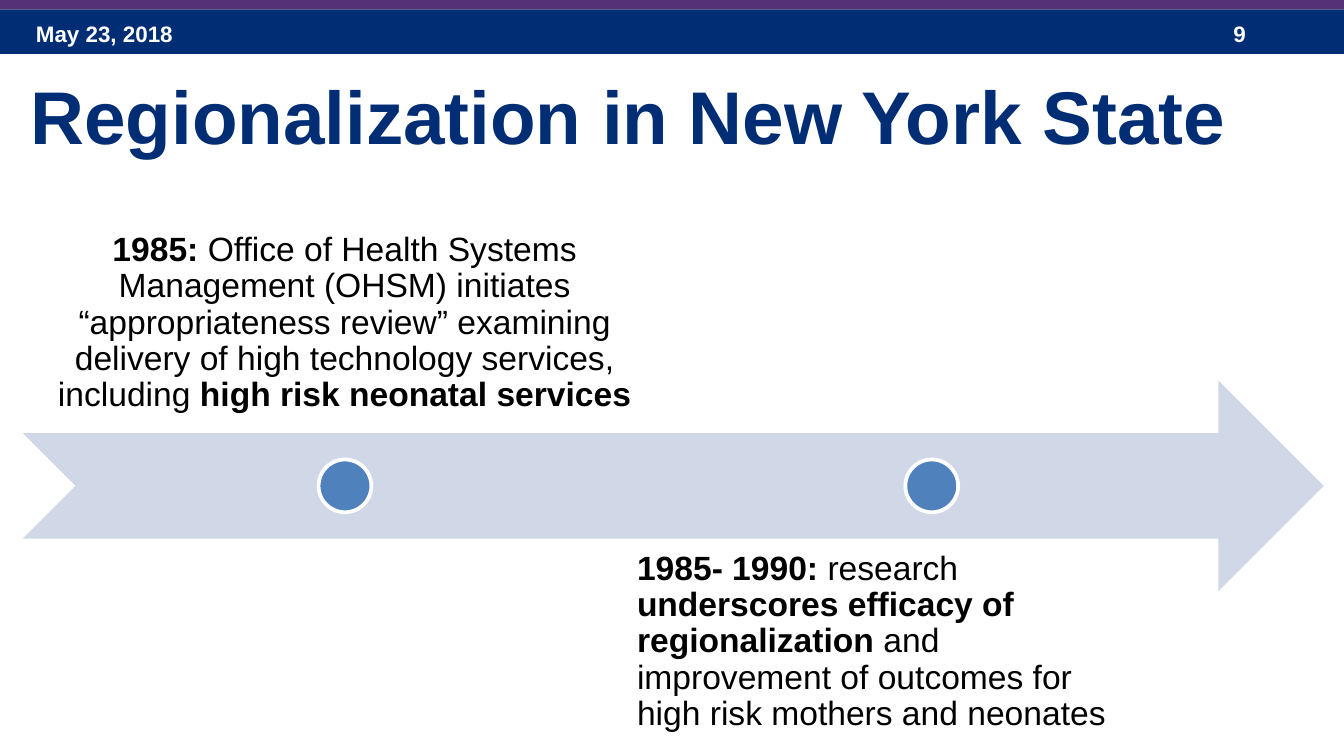
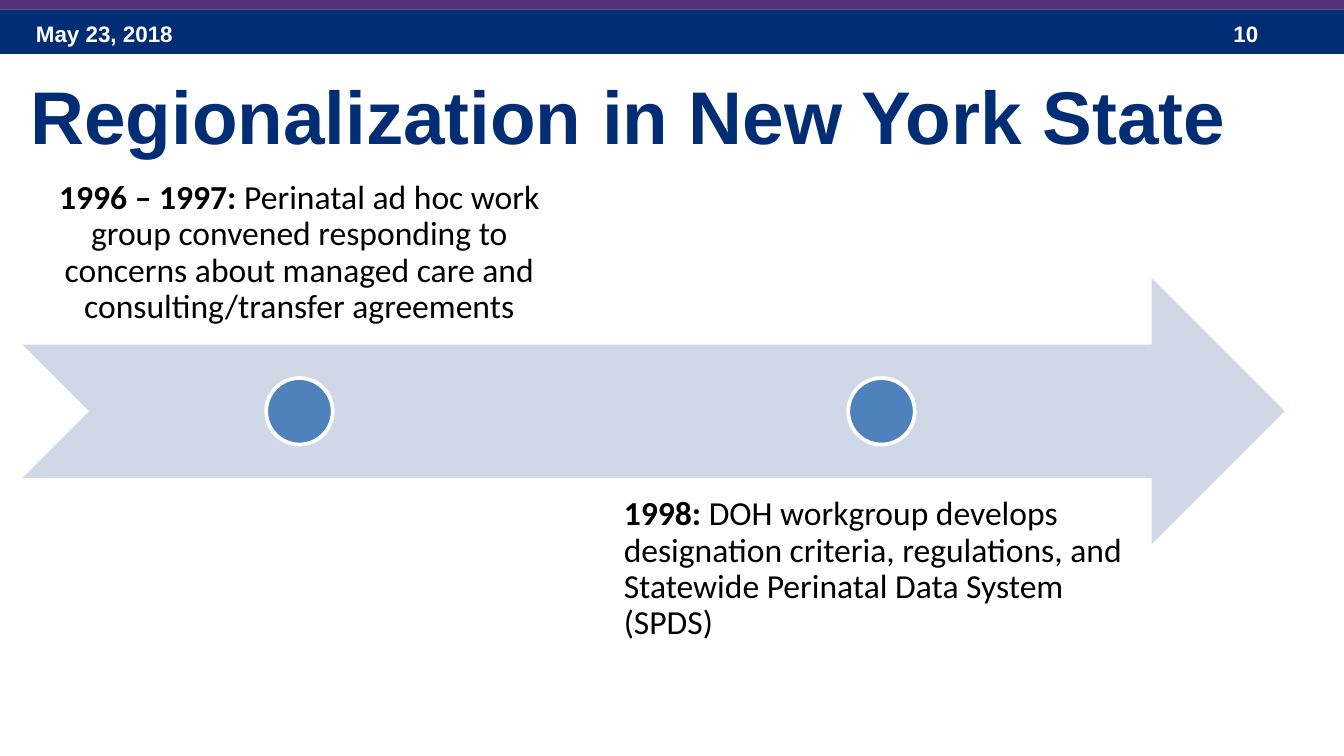
from pptx import Presentation
from pptx.dml.color import RGBColor
from pptx.enum.shapes import MSO_SHAPE
from pptx.enum.text import MSO_ANCHOR, PP_ALIGN
from pptx.util import Cm, Pt

RECT, OVAL, ARROW = MSO_SHAPE.RECTANGLE, MSO_SHAPE.OVAL, MSO_SHAPE.NOTCHED_RIGHT_ARROW
TOP, MIDDLE, BOTTOM = MSO_ANCHOR.TOP, MSO_ANCHOR.MIDDLE, MSO_ANCHOR.BOTTOM
LEFT, CENTER = PP_ALIGN.LEFT, PP_ALIGN.CENTER

NAVY, PURPLE, PALE, BLUE = "002D73", "553278", "D0D8E8", "4F81BD"
WHITE, BLACK = "FFFFFF", "000000"
WIDTH, HEIGHT = 25.4, 14.29
MARGIN = 0.43

TIMELINES = [
    dict(
        number="9", font="Arial", box=(MARGIN, 7.19, 24.59, 3.99),
        events=[
            dict(left=0, width=12.17, dot=6.09, nudge=0, runs=[
                ("1985: ", True),
                ("Office of Health Systems Management (OHSM) initiates “appropriateness review” "
                 "examining delivery of high technology services, including ", False),
                ("high risk neonatal services", True)]),
            dict(left=11.25, width=9.88, dot=17.18, nudge=-0.12, runs=[
                ("1985- 1990:", True),
                (" research ", False),
                ("underscores efficacy of regionalization ", True),
                ("and improvement of outcomes for high risk mothers and neonates", False)]),
        ]),
    dict(
        number="10", font="Calibri", box=(MARGIN, 5.26, 23.85, 5.03),
        events=[
            dict(left=0, width=10.46, dot=5.23, nudge=0, runs=[
                ("1996 – 1997:", True),
                (" Perinatal ad hoc work group convened responding to concerns about "
                 "managed care and consulting/transfer agreements", False)]),
            dict(left=11, width=10.46, dot=16.23, nudge=0, runs=[
                ("1998: ", True),
                ("DOH workgroup develops designation criteria, regulations, and "
                 "Statewide Perinatal Data System (SPDS)", False)]),
        ]),
]


def color(value):
    return RGBColor.from_string(value)


def add_figure(slide, kind, box, fill, outline=None):
    figure = slide.shapes.add_shape(kind, *map(Cm, box))
    figure.shadow.inherit = False
    figure.fill.solid()
    figure.fill.fore_color.rgb = color(fill)
    if outline:
        figure.line.color.rgb = color(outline)
        figure.line.width = Pt(2)
    else:
        figure.line.fill.background()


def add_text(slide, box, runs, size, font, ink, align=LEFT, anchor=MIDDLE, inset=None, spacing=None):
    frame = slide.shapes.add_textbox(*map(Cm, box)).text_frame
    frame.word_wrap = True
    frame.vertical_anchor = anchor
    if inset:
        frame.margin_left = frame.margin_right = Cm(inset)
        frame.margin_top = frame.margin_bottom = Cm(inset)
    paragraph = frame.paragraphs[0]
    paragraph.alignment = align
    paragraph.line_spacing = spacing
    for words, bold in runs:
        run = paragraph.add_run()
        run.text = words
        run.font.size = Pt(size)
        run.font.name = font
        run.font.bold = bold
        run.font.color.rgb = color(ink)


def add_header(slide, box, number):
    left, top, width, height = box
    stripe = 0.18
    add_figure(slide, RECT, (left, top + stripe, width, height - stripe), NAVY)
    add_figure(slide, RECT, (left, top, width, stripe), PURPLE)
    for offset, span, words in ((MARGIN, 5.92, "May 23, 2018"), (23.06, 1.9, number)):
        add_text(slide, (left + offset, top + 0.25, span, 0.76), [(words, True)], 12, "Arial", WHITE)


def add_title(slide, box):
    add_text(slide, box, [("Regionalization in New York State ", True)], 40, "Arial", NAVY,
             align=CENTER, anchor=BOTTOM)


def add_timeline(slide, box, events, font):
    left, top, width, height = box
    quarter = height / 4
    add_figure(slide, ARROW, box, PALE)
    placements = ((quarter - height, CENTER, BOTTOM), (3 * quarter, LEFT, TOP))
    for event, (offset, align, anchor) in zip(events, placements):
        place = (left + event["left"], top + offset + event["nudge"], event["width"], height)
        add_text(slide, place, event["runs"], 18, font, BLACK, align, anchor, 0.36, 0.9)
        dot = (left + event["dot"] - quarter / 2, top + 1.5 * quarter, quarter, quarter)
        add_figure(slide, OVAL, dot, BLUE, WHITE)


def main():
    deck = Presentation()
    deck.slide_width, deck.slide_height = Cm(WIDTH), Cm(HEIGHT)
    for timeline in TIMELINES:
        slide = deck.slides.add_slide(deck.slide_layouts[6])
        add_header(slide, (0, 0, WIDTH, 1.02), timeline["number"])
        add_title(slide, (0, 1.17, 24.13, 1.96))
        add_timeline(slide, timeline["box"], timeline["events"], timeline["font"])
    deck.save("out.pptx")


if __name__ == "__main__":
    main()
